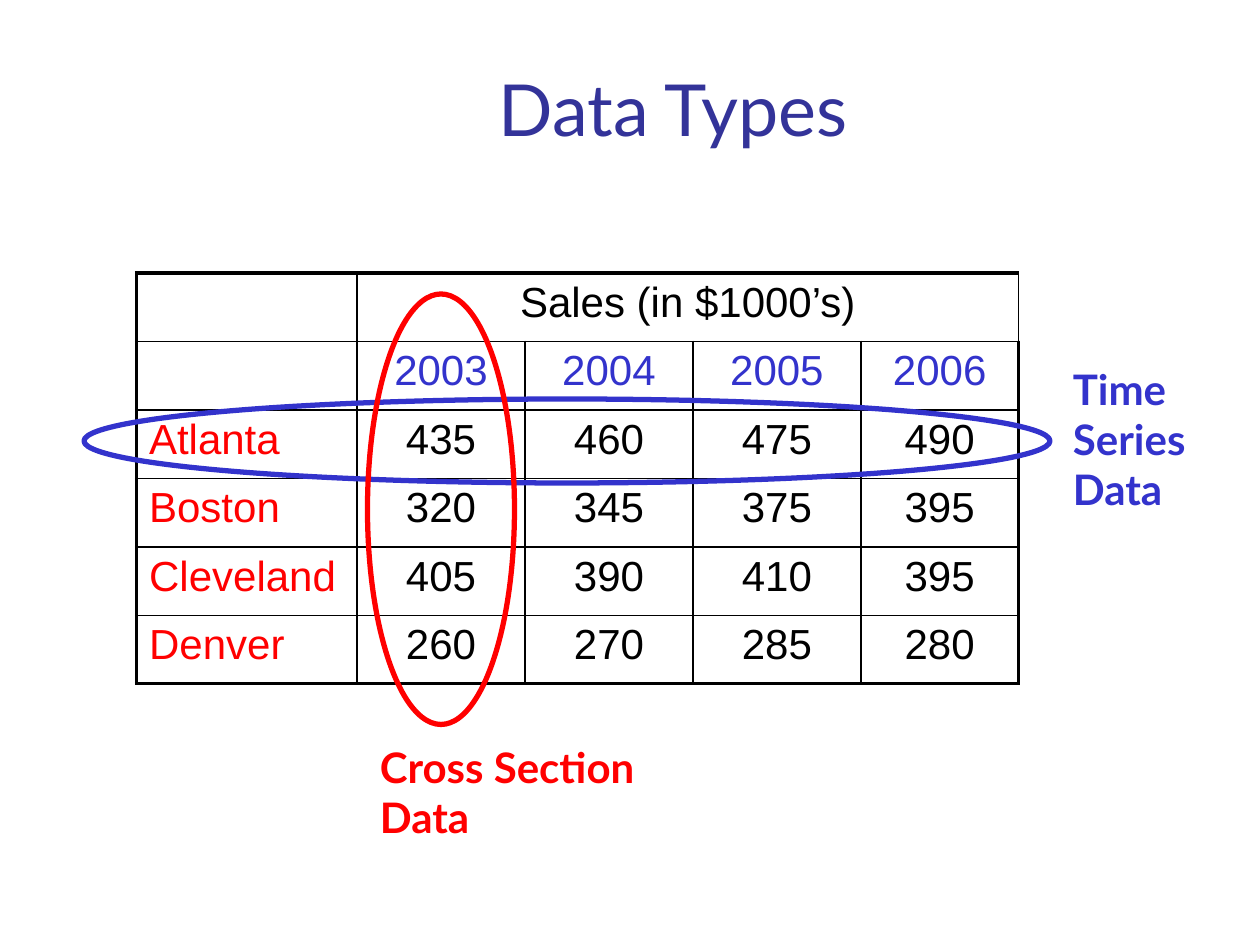
from lxml.etree import SubElement
from pptx import Presentation
from pptx.dml.color import RGBColor
from pptx.enum.shapes import MSO_SHAPE
from pptx.enum.text import MSO_ANCHOR, PP_ALIGN
from pptx.oxml import parse_xml
from pptx.oxml.ns import nsdecls, qn
from pptx.util import Inches, Pt

COLORS = {"title": "333399", "series": "3333CC", "section": "FF0000", "ink": "000000"}
HEAD, BODY = "Lato", "Arial"
UNITS_PER_INCH = 12

SALES = [
    ["", "Sales (in $1000’s)", "", "", ""],
    ["", "2003", "2004", "2005", "2006"],
    ["Atlanta", "435", "460", "475", "490"],
    ["Boston", "320", "345", "375", "395"],
    ["Cleveland", "405", "390", "410", "395"],
    ["Denver", "260", "270", "285", "280"],
]
COL_UNITS = [21, 16, 16, 16, 15]
ROW_UNITS = 6.52


def grid(*units):
    return [Inches(u / UNITS_PER_INCH) for u in units]


class Deck:
    def __init__(self, cols, rows):
        self.prs = Presentation()
        self.prs.slide_width, self.prs.slide_height = grid(cols, rows)
        self.s = self.prs.slides.add_slide(self.prs.slide_layouts[6])

    def style(self, p, color, size=24, font=HEAD, bold=False, align=PP_ALIGN.LEFT):
        p.alignment = align
        p.font.name, p.font.size, p.font.bold = font, Pt(size), bold
        p.font.color.rgb = RGBColor.from_string(COLORS[color])

    def text(self, text, box, color, anchor=MSO_ANCHOR.TOP, **style):
        tf = self.s.shapes.add_textbox(*grid(*box)).text_frame
        tf.word_wrap = True
        tf.vertical_anchor = anchor
        p = tf.paragraphs[0]
        p.text = text
        self.style(p, color, **style)

    def ring(self, box, color):
        sp = self.s.shapes.add_shape(MSO_SHAPE.OVAL, *grid(*box))
        sp.shadow.inherit = False
        sp.fill.background()
        sp.line.color.rgb = RGBColor.from_string(COLORS[color])
        sp.line.width = Pt(3)

    def borders(self, cell, outer):
        tc_pr = cell._tc.get_or_add_tcPr()
        for i, side in enumerate("LRTB"):
            width = Pt(2.25 if side in outer else 1)
            ln = parse_xml(f'<a:ln{side} {nsdecls("a")} w="{width}"/>')
            fill = SubElement(ln, qn("a:solidFill"))
            SubElement(fill, qn("a:srgbClr"), val=COLORS["ink"])
            tc_pr.insert(i, ln)

    def table(self, data, left, top, col_units, row_units):
        rows, cols = len(data), len(col_units)
        box = grid(left, top, sum(col_units), rows * row_units)
        table = self.s.shapes.add_table(rows, cols, *box).table
        table.first_row = table.horz_banding = False
        for col, width in zip(table.columns, grid(*col_units)):
            col.width = width
        for row in table.rows:
            row.height = grid(row_units)[0]
        table.cell(0, 1).merge(table.cell(0, cols - 1))
        for r, values in enumerate(data):
            for c, value in enumerate(values):
                cell = table.cell(r, c)
                cell.fill.background()
                edges = {"L": c == 0, "R": c == cols - 1, "T": r == 0, "B": r == rows - 1}
                self.borders(cell, [side for side, on in edges.items() if on])
                p = cell.text_frame.paragraphs[0]
                p.text = value
                color = "section" if c == 0 else "series" if r == 1 else "ink"
                align = PP_ALIGN.CENTER if c else PP_ALIGN.LEFT
                self.style(p, color, font=BODY, align=align)


def main():
    deck = Deck(120, 90)
    deck.text("Data Types", (13, 5, 102.2, 10), "title", MSO_ANCHOR.BOTTOM,
              size=41, align=PP_ALIGN.CENTER)
    deck.table(SALES, 13, 26, COL_UNITS, ROW_UNITS)
    deck.ring((8, 38, 92, 8), "series")
    deck.ring((35, 28, 14, 41), "section")
    deck.text("Time Series Data", (101, 34, 15, 15.6), "series", bold=True)
    deck.text("Cross Section Data", (35, 70, 30, 10.8), "section", bold=True)
    deck.prs.save("out.pptx")


if __name__ == "__main__":
    main()
